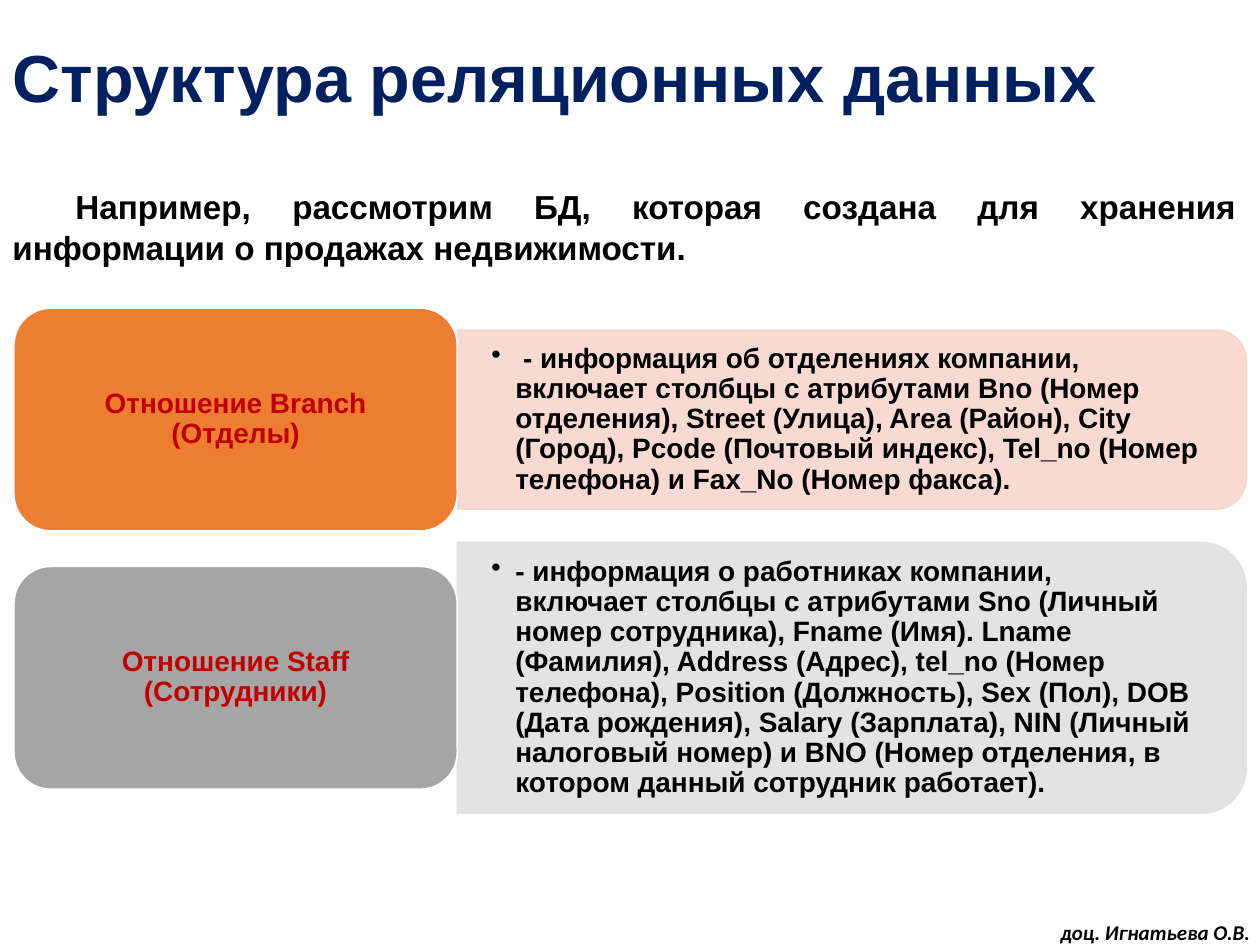
import pptx
import pptx.util
import pptx.dml.color
import pptx.enum.shapes
import pptx.enum.text
import pptx.oxml.ns
import lxml.etree

Inches = pptx.util.Inches
Pt = pptx.util.Pt
Align = pptx.enum.text.PP_ALIGN
Anchor = pptx.enum.text.MSO_ANCHOR
Shapes = pptx.enum.shapes.MSO_SHAPE

COLORS = {
    "title": "002060", "text": "000000", "label": "C00000", "border": "FFFFFF",
    "branch": "ED7D31", "branch_detail": "F8D7CE",
    "staff": "A5A5A5", "staff_detail": "E1E1E1",
}

RELATIONS = [
    ("branch", 3.33, 1.42, "Отношение Branch\v(Отделы)",
     " - информация об отделениях компании, включает столбцы с атрибутами Вnо (Номер "
     "отделения), Street (Улица), Area (Район), City (Город), Pcode (Почтовый индекс), "
     "Tel_no (Номер телефона) и Fax_No (Номер факса)."),
    ("staff", 5.38, 2.15, "Отношение Staff (Сотрудники)",
     "- информация о работниках компании,\vвключает столбцы с атрибутами Sno (Личный "
     "номер сотрудника), Fname (Имя). Lname (Фамилия), Address (Адрес), tel_no (Номер "
     "телефона), Position (Должность), Sex (Пол), DOB (Дата рождения), Salary (Зарплата), "
     "NIN (Личный налоговый номер) и BNО (Номер отделения, в котором данный сотрудник "
     "работает)."),
]


class SlideBuilder:
    """Holds the style and the current slide, and adds each kind of element."""

    def __init__(self, presentation):
        self.slide = presentation.slides.add_slide(presentation.slide_layouts[5])
        self.font = "Arial"

    def color(self, name):
        return pptx.dml.color.RGBColor.from_string(COLORS[name])

    def set_text(self, shape, text, size, color="text", align=Align.LEFT, anchor=Anchor.TOP,
                 insets=(0.1, 0.05), spacing=1.0, font=None):
        frame = shape.text_frame
        frame.word_wrap = True
        frame.auto_size = pptx.enum.text.MSO_AUTO_SIZE.NONE
        frame.vertical_anchor = anchor
        frame.margin_left = frame.margin_right = Inches(insets[0])
        frame.margin_top = frame.margin_bottom = Inches(insets[1])
        frame.text = text
        paragraph = frame.paragraphs[0]
        paragraph.alignment = align
        paragraph.line_spacing = spacing
        paragraph.font.name = font or self.font
        paragraph.font.size = Pt(size)
        paragraph.font.bold = True
        paragraph.font.color.rgb = self.color(color)
        return paragraph

    def title(self, text, left, top, width, height):
        title = self.slide.shapes.title
        title.left, title.top = Inches(left), Inches(top)
        title.width, title.height = Inches(width), Inches(height)
        self.set_text(title, text, 38, "title", anchor=Anchor.MIDDLE, spacing=0.9)

    def text(self, text, left, top, width, height, size, **style):
        box = self.slide.shapes.add_textbox(
            Inches(left), Inches(top), Inches(width), Inches(height))
        return self.set_text(box, text, size, **style)

    def shape(self, kind, left, top, width, height, fill, line):
        shape = self.slide.shapes.add_shape(
            kind, Inches(left), Inches(top), Inches(width), Inches(height))
        shape.shadow.inherit = False
        shape.fill.solid()
        shape.fill.fore_color.rgb = self.color(fill)
        shape.line.color.rgb = self.color(line)
        shape.line.width = Pt(1)
        return shape

    def label(self, text, center, fill):
        width, height = 3.52, 1.77
        shape = self.shape(Shapes.ROUNDED_RECTANGLE, 0.11, center - height / 2,
                           width, height, fill, "border")
        self.set_text(shape, text, 16, "label", Align.CENTER, Anchor.MIDDLE,
                      (0.07, 0.03), 0.9)

    def detail(self, text, center, height, fill):
        left, width = 3.63, 6.26
        shape = self.shape(Shapes.ROUND_2_SAME_RECTANGLE, left + (width - height) / 2,
                           center - width / 2, height, width, fill, fill)
        shape.rotation = 90
        qn = pptx.oxml.ns.qn
        for color in shape._element.spPr.iter(qn("a:srgbClr")):
            lxml.etree.SubElement(color, qn("a:alpha"), val="90000")
        paragraph = self.text(text, left, center - 0.45 * height, width - 0.05 * height,
                              0.9 * height, 16, anchor=Anchor.MIDDLE,
                              insets=(0.27, 0.14), spacing=0.9)
        properties = paragraph._p.get_or_add_pPr()
        properties.set("marL", str(Inches(0.19)))
        properties.set("indent", str(-Inches(0.19)))
        bullet = lxml.etree.Element(qn("a:buChar"), char="•")
        properties.find(qn("a:defRPr")).addprevious(bullet)


def main():
    presentation = pptx.Presentation()
    presentation.slide_width = Inches(10)
    presentation.slide_height = Inches(7.5)
    builder = SlideBuilder(presentation)
    builder.title("Структура реляционных данных", 0, 0.11, 10, 1.07)
    intro = builder.text(
        "Например, рассмотрим БД, которая создана для хранения информации "
        "о продажах недвижимости.", 0, 1.41, 9.91, 0.8, 19, align=Align.JUSTIFY, spacing=1.05)
    intro._p.get_or_add_pPr().set("indent", str(Inches(0.5)))
    author = builder.text("доц. Игнатьева О.В.", 8.32, 7.25, 1.73, 0.3, 12, font="Calibri")
    author.font.italic = True
    for name, center, height, label, detail in RELATIONS:
        builder.detail(detail, center, height, name + "_detail")
        builder.label(label, center, name)
    presentation.save("out.pptx")


if __name__ == "__main__":
    main()
